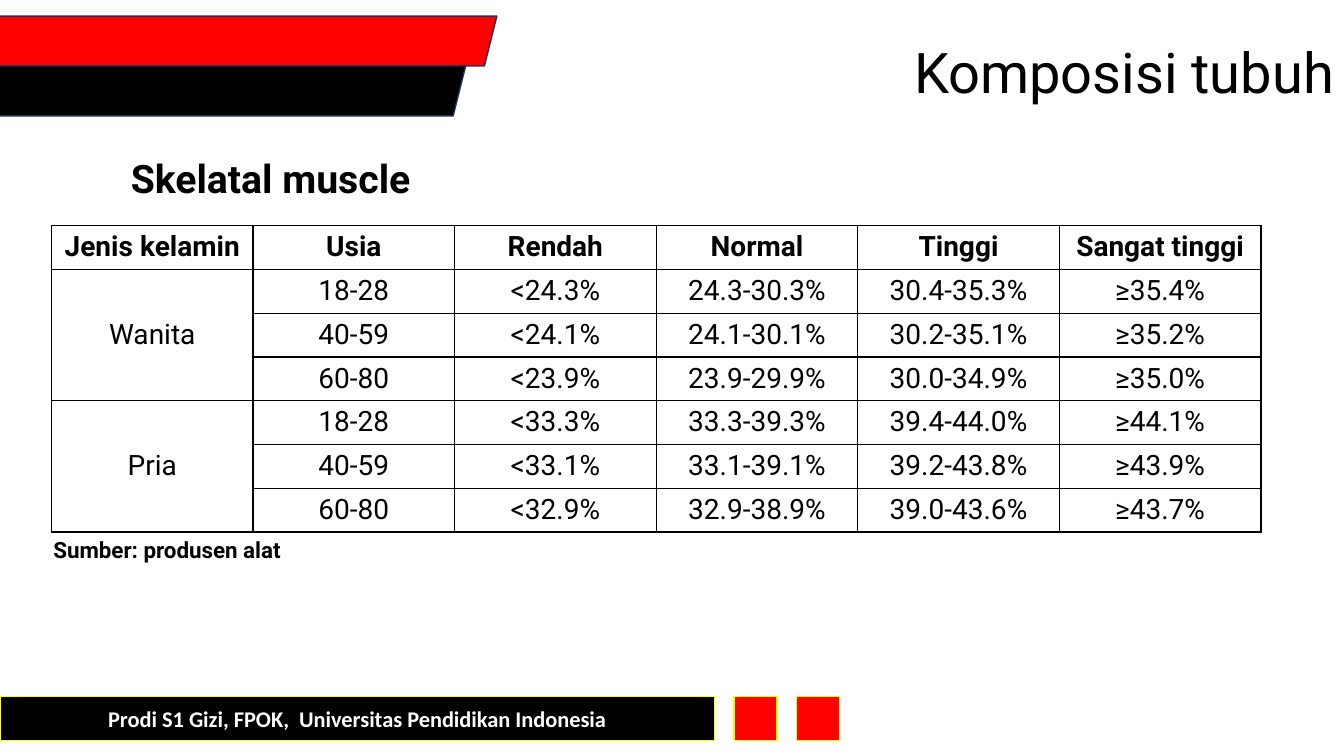
"""Build the slide with the skeletal muscle table by sex and age."""
import lxml.etree
import pptx
import pptx.dml.color
import pptx.enum.shapes
import pptx.enum.text
import pptx.oxml.ns
import pptx.util

TITLE = "Komposisi tubuh"
SUBTITLE = "Skelatal muscle"
SOURCE = "Sumber: produsen alat"
FOOTER = "Prodi S1 Gizi, FPOK,  Universitas Pendidikan Indonesia"
HEADERS = ["Jenis kelamin", "Usia", "Rendah", "Normal", "Tinggi", "Sangat tinggi"]
GROUPS = {
    "Wanita": [
        ("18-28", "<24.3%", "24.3-30.3%", "30.4-35.3%", "≥35.4%"),
        ("40-59", "<24.1%", "24.1-30.1%", "30.2-35.1%", "≥35.2%"),
        ("60-80", "<23.9%", "23.9-29.9%", "30.0-34.9%", "≥35.0%"),
    ],
    "Pria": [
        ("18-28", "<33.3%", "33.3-39.3%", "39.4-44.0%", "≥44.1%"),
        ("40-59", "<33.1%", "33.1-39.1%", "39.2-43.8%", "≥43.9%"),
        ("60-80", "<32.9%", "32.9-38.9%", "39.0-43.6%", "≥43.7%"),
    ],
}
STRIPES = [("FF0000", -2.93), ("000000", -5.25)]
STRIPE_TOP, STRIPE_WIDTH, STRIPE_HEIGHT = 2.13, 39.9, 6.6
FOOTER_TOP, FOOTER_WIDTH, FOOTER_HEIGHT = 92.13, 53.18, 5.87
SQUARE_WIDTH, SQUARE_GAP, SQUARE_COUNT = 3.23, 1.42, 2
TABLE_LEFT, TABLE_TOP, TABLE_WIDTH, ROW_HEIGHT = 3.83, 29.87, 90, 5.7

ALIGN = pptx.enum.text.PP_ALIGN
ANCHOR = pptx.enum.text.MSO_ANCHOR
SHAPE = pptx.enum.shapes.MSO_SHAPE

deck = pptx.Presentation()
deck.slide_width = pptx.util.Inches(13.33)
deck.slide_height = pptx.util.Inches(7.5)


def box(left, top, width, height):
    """Turn percentages of the slide into lengths."""
    across, down = deck.slide_width / 100, deck.slide_height / 100
    return [round(share) for share in
            (left * across, top * down, width * across, height * down)]


def color(value):
    """Return the colour of a hex string."""
    return pptx.dml.color.RGBColor.from_string(value)


def write(frame, text, size=20, font="Roboto", ink="000000", bold=False,
          align=ALIGN.LEFT, anchor=ANCHOR.TOP, spacing=1.0, before=0):
    """Fill a text frame with one formatted paragraph."""
    frame.word_wrap = True
    frame.vertical_anchor = anchor
    paragraph = frame.paragraphs[0]
    paragraph.alignment = align
    paragraph.line_spacing = spacing
    paragraph.space_before = pptx.util.Pt(before)
    run = paragraph.add_run()
    run.text = text
    run.font.size = pptx.util.Pt(size)
    run.font.name = font
    run.font.bold = bold
    run.font.color.rgb = color(ink)


def add_block(slide, kind, place, fill, line):
    """Add a filled and outlined shape."""
    block = slide.shapes.add_shape(kind, *box(*place))
    block.shadow.inherit = False
    block.fill.solid()
    block.fill.fore_color.rgb = color(fill)
    block.line.color.rgb = color(line)
    block.line.width = pptx.util.Pt(1)
    return block


def add_label(slide, place, text, **style):
    """Add a text box with a bold text."""
    label = slide.shapes.add_textbox(*box(*place))
    write(label.text_frame, text, bold=True, spacing=0.9, before=10, **style)


def outline(cell):
    """Draw thin black borders on all sides of a cell."""
    properties = cell._tc.get_or_add_tcPr()
    for side in ("lnL", "lnR", "lnT", "lnB"):
        border = lxml.etree.SubElement(properties, pptx.oxml.ns.qn(f"a:{side}"), w="12700")
        fill = lxml.etree.SubElement(border, pptx.oxml.ns.qn("a:solidFill"))
        lxml.etree.SubElement(fill, pptx.oxml.ns.qn("a:srgbClr"), val="000000")


def add_table(slide):
    """Add the table with one merged first cell for each sex."""
    body = [(sex if i == 0 else "", *values)
            for sex, ages in GROUPS.items() for i, values in enumerate(ages)]
    rows = [HEADERS, *body]
    place = box(TABLE_LEFT, TABLE_TOP, TABLE_WIDTH, ROW_HEIGHT * len(rows))
    table = slide.shapes.add_table(len(rows), len(HEADERS), *place).table
    table.first_row = table.horz_banding = False
    for row in table.rows:
        row.height = place[3] // len(rows)
    for r, values in enumerate(rows):
        for c, value in enumerate(values):
            cell = table.cell(r, c)
            outline(cell)
            cell.fill.solid()
            cell.fill.fore_color.rgb = color("FFFFFF")
            if value:
                write(cell.text_frame, value, bold=r == 0, align=ALIGN.CENTER)
                cell.vertical_anchor = ANCHOR.MIDDLE if r and c == 0 else ANCHOR.TOP
    first = 1
    for ages in GROUPS.values():
        last = first + len(ages) - 1
        table.cell(first, 0).merge(table.cell(last, 0))
        first = last + 1


def main():
    """Lay out the slide and save it."""
    slide = deck.slides.add_slide(deck.slide_layouts[5])
    title = slide.shapes.title
    title.left, title.top, title.width, title.height = box(34, 0.27, 66, 19.33)
    title.text_frame.auto_size = pptx.enum.text.MSO_AUTO_SIZE.NONE
    write(title.text_frame, TITLE, size=40, align=ALIGN.RIGHT,
          anchor=ANCHOR.MIDDLE, spacing=0.9)
    add_label(slide, (9, 20.4, 79.65, 9.47), SUBTITLE, size=28)

    for i, (fill, left) in enumerate(STRIPES):
        top = STRIPE_TOP + i * STRIPE_HEIGHT
        add_block(slide, SHAPE.PARALLELOGRAM,
                  (left, top, STRIPE_WIDTH, STRIPE_HEIGHT), fill, "1E3256")

    footer = add_block(slide, SHAPE.RECTANGLE,
                       (0, FOOTER_TOP, FOOTER_WIDTH, FOOTER_HEIGHT), "000000", "FFFF00")
    write(footer.text_frame, FOOTER, size=16, font="Calibri", ink="FFFFFF",
          bold=True, align=ALIGN.CENTER, anchor=ANCHOR.MIDDLE)
    for i in range(SQUARE_COUNT):
        left = FOOTER_WIDTH + SQUARE_GAP + i * (SQUARE_WIDTH + SQUARE_GAP)
        add_block(slide, SHAPE.RECTANGLE,
                  (left, FOOTER_TOP, SQUARE_WIDTH, FOOTER_HEIGHT), "FF0000", "FFFF00")

    add_table(slide)
    add_label(slide, (3.23, 70.67, 22.95, 9.47), SOURCE, size=16)
    deck.save("out.pptx")


if __name__ == "__main__":
    main()
